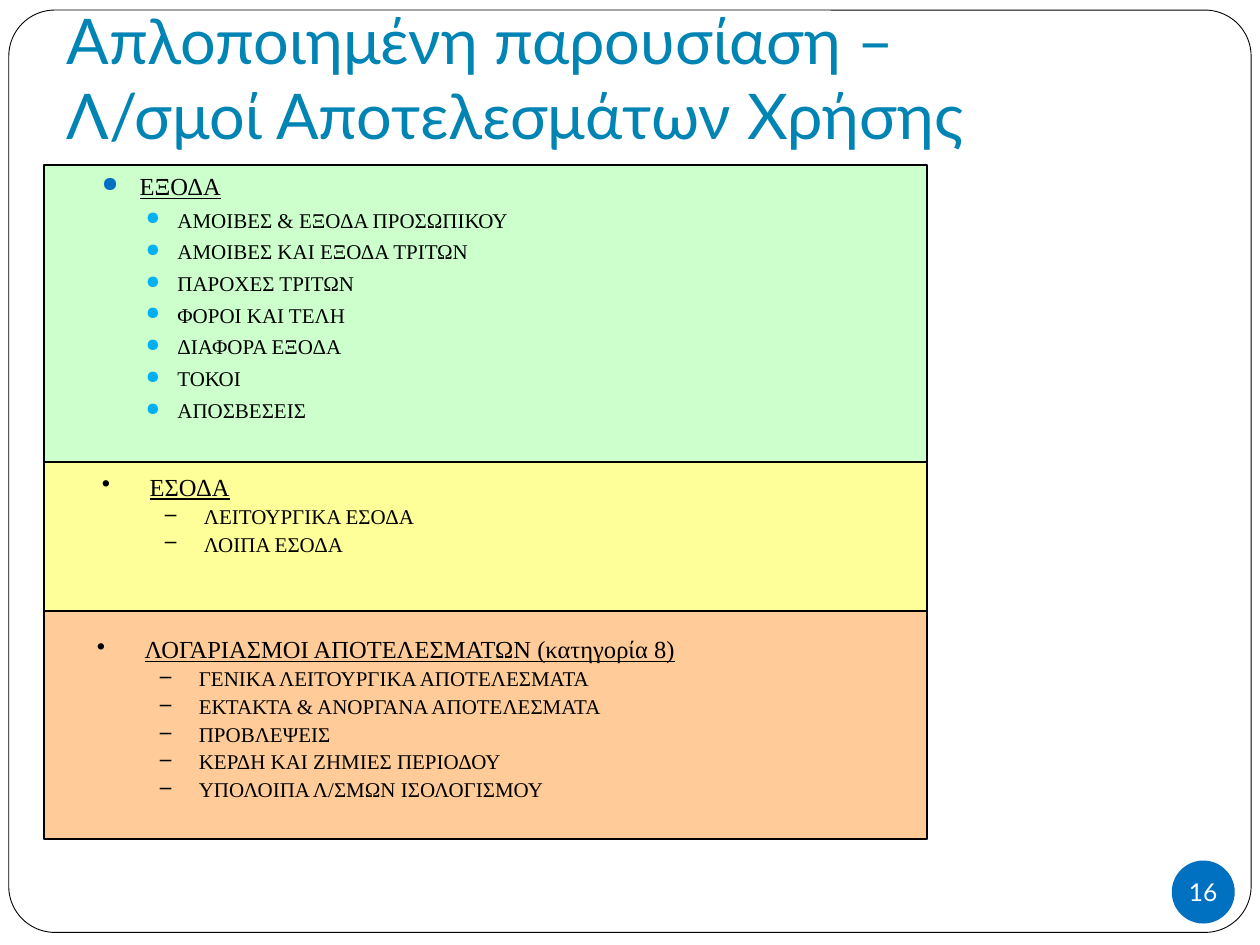
from pptx import Presentation
from pptx.dml.color import RGBColor
from pptx.enum.shapes import MSO_SHAPE
from pptx.enum.text import MSO_ANCHOR, PP_ALIGN
from pptx.oxml.ns import qn
from pptx.util import Inches, Pt
from lxml import etree

ROUND_RECT, RECT, OVAL = MSO_SHAPE.ROUNDED_RECTANGLE, MSO_SHAPE.RECTANGLE, MSO_SHAPE.OVAL
BOTTOM, MIDDLE, CENTER = MSO_ANCHOR.BOTTOM, MSO_ANCHOR.MIDDLE, PP_ALIGN.CENTER
WHITE = RGBColor(0xFF, 0xFF, 0xFF)
BLACK = RGBColor(0x00, 0x00, 0x00)
TITLE_BLUE = RGBColor(0x00, 0x84, 0xB4)
BLUE = RGBColor(0x00, 0x70, 0xC0)
SKY = RGBColor(0x00, 0xB0, 0xF0)
GREEN = RGBColor(0xCC, 0xFF, 0xCC)
YELLOW = RGBColor(0xFF, 0xFF, 0x99)
ORANGE = RGBColor(0xFF, 0xCC, 0x99)

deck = Presentation()
deck.slide_width, deck.slide_height = Inches(10), Inches(7.5)
page = deck.slides.add_slide(deck.slide_layouts[6])
COL, ROW = deck.slide_width / 100, deck.slide_height / 75


def add_panel(kind, left, top, width, height, fill, line_width):
    panel = page.shapes.add_shape(
        kind, int(left * COL), int(top * ROW), int(width * COL), int(height * ROW))
    panel.shadow.inherit = False
    panel.fill.solid()
    panel.fill.fore_color.rgb = fill
    if line_width:
        panel.line.color.rgb = BLACK
        panel.line.width = Pt(line_width)
    else:
        panel.line.fill.background()
    return panel


def add_bullet(para, mark, color, size, left, hang):
    props = para._p.get_or_add_pPr()
    props.set("marL", str(Inches(left)))
    props.set("indent", str(-Inches(hang)))
    bullet_color = etree.SubElement(props, qn("a:buClr"))
    etree.SubElement(bullet_color, qn("a:srgbClr"), val=str(color))
    etree.SubElement(props, qn("a:buSzPct"), val=str(size * 1000))
    etree.SubElement(props, qn("a:buChar"), char=mark)


frame = add_panel(ROUND_RECT, 0.7, 0.8, 98.6, 73.2, WHITE, 0.5)
frame.adjustments[0] = 0.05

badge = add_panel(OVAL, 93, 68.3, 5, 5, BLUE, 0).text_frame
badge.margin_left = badge.margin_right = badge.margin_top = badge.margin_bottom = 0
badge.word_wrap = False
badge.vertical_anchor = MIDDLE
para = badge.paragraphs[0]
para.alignment = CENTER
span = para.add_run()
span.text = "16"
span.font.name, span.font.size = "Lato", Pt(14)
span.font.color.rgb = WHITE

title = page.shapes.add_textbox(
    int(4.3 * COL), int(0.6 * ROW), int(93.7 * COL), int(12.5 * ROW)).text_frame
title.word_wrap = True
title.vertical_anchor = BOTTOM
title.margin_bottom = Inches(0.1)
para = title.paragraphs[0]
for number, line in enumerate(["Απλοποιημένη παρουσίαση – ", "Λ/σμοί Αποτελεσμάτων Χρήσης"]):
    if number:
        para.add_line_break()
    span = para.add_run()
    span.text = line
    span.font.name, span.font.size = "Lato", Pt(36)
    span.font.color.rgb = TITLE_BLUE

dot_style = (("●", BLUE, 85, 0.3, 0.3), ("●", SKY, 85, 0.6, 0.25), 3.7, 1.0)
dash_style = (("•", BLACK, 100, 0.38, 0.38), ("–", BLACK, 100, 0.81, 0.31), 2.8, 0.9)
sections = [
    (GREEN, 23.6, (7.1, 0, 50, 23.6), dot_style, "ΕΞΟΔΑ",
     ["ΑΜΟΙΒΕΣ & ΕΞΟΔΑ ΠΡΟΣΩΠΙΚΟΥ", "ΑΜΟΙΒΕΣ ΚΑΙ ΕΞΟΔΑ ΤΡΙΤΩΝ", "ΠΑΡΟΧΕΣ ΤΡΙΤΩΝ",
      "ΦΟΡΟΙ ΚΑΙ ΤΕΛΗ", "ΔΙΑΦΟΡΑ ΕΞΟΔΑ", "ΤΟΚΟΙ", "ΑΠΟΣΒΕΣΕΙΣ"]),
    (YELLOW, 11.8, (7.1, 0.5, 64.2, 8.7), dash_style, "ΕΣΟΔΑ",
     ["ΛΕΙΤΟΥΡΓΙΚΑ ΕΣΟΔΑ", "ΛΟΙΠΑ ΕΣΟΔΑ"]),
    (ORANGE, 18.1, (6.7, 1.6, 64.5, 16.5), dash_style, "ΛΟΓΑΡΙΑΣΜΟΙ ΑΠΟΤΕΛΕΣΜΑΤΩΝ (κατηγορία 8)",
     ["ΓΕΝΙΚΑ ΛΕΙΤΟΥΡΓΙΚΑ ΑΠΟΤΕΛΕΣΜΑΤΑ", "ΕΚΤΑΚΤΑ & ΑΝΟΡΓΑΝΑ ΑΠΟΤΕΛΕΣΜΑΤΑ", "ΠΡΟΒΛΕΨΕΙΣ",
      "ΚΕΡΔΗ ΚΑΙ ΖΗΜΙΕΣ ΠΕΡΙΟΔΟΥ", "ΥΠΟΛΟΙΠΑ Λ/ΣΜΩΝ ΙΣΟΛΟΓΙΣΜΟΥ"]),
]
top = 13.1
for fill, height, (left, drop, width, depth), style, heading, items in sections:
    add_panel(RECT, 3.5, top, 70.1, height, fill, 1)
    box = page.shapes.add_textbox(
        int(left * COL), int((top + drop) * ROW), int(width * COL), int(depth * ROW)).text_frame
    box.word_wrap = True
    heading_bullet, item_bullet, gap, spacing = style
    for number, line in enumerate([heading] + items):
        para = box.add_paragraph() if number else box.paragraphs[0]
        para.level = 1 if number else 0
        para.line_spacing = spacing
        para.space_before = Pt(gap if number else 0)
        add_bullet(para, *(item_bullet if number else heading_bullet))
        span = para.add_run()
        span.text = line
        span.font.name = "Times New Roman"
        span.font.size = Pt(12 if number else 14)
        span.font.underline = number == 0
        span.font.color.rgb = BLACK
    top += height

deck.save("out.pptx")
